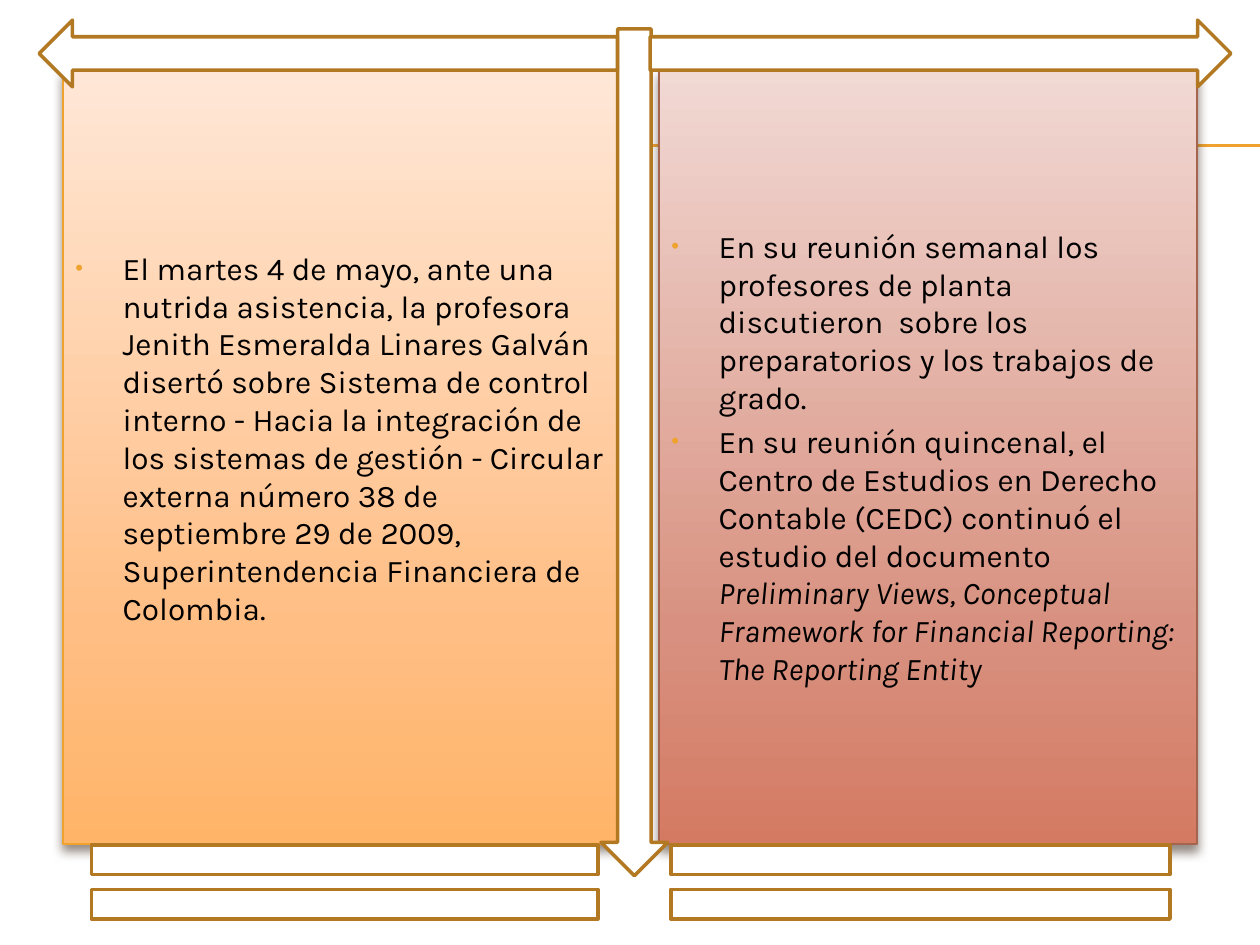
"""Two news panels framed by block arrows and equal signs."""
from copy import deepcopy

from lxml import etree
from pptx import Presentation
from pptx.dml.color import RGBColor as RGB
from pptx.enum.shapes import MSO_CONNECTOR as CONN, MSO_SHAPE as SHAPE
from pptx.enum.text import MSO_ANCHOR as ANCHOR, PP_ALIGN as ALIGN
from pptx.oxml import parse_xml
from pptx.oxml.ns import qn
from pptx.util import Pt

COLORS = {"gold": "F0A22E", "brown": "B27822", "rust": "A5644E",
          "shadow": "4E3B30", "white": "FFFFFF", "text": "000000"}
NS = 'xmlns:a="http://schemas.openxmlformats.org/drawingml/2006/main"'
INDENT = Pt(27)

PANELS = [
    (36, 318.24, "gold", ["FFE7D7", "FFBE84", "FFB468"], 25.3, [
        ["El martes 4 de mayo, ante una nutrida asistencia, la profesora Jenith "
         "Esmeralda Linares Galván disertó sobre Sistema de control interno - Hacia "
         "la integración de los sistemas de gestión - Circular externa número 38 de "
         "septiembre 29 de 2009, Superintendencia Financiera de Colombia."]]),
    (376.56, 307.44, "rust", ["F1D9D4", "D89180", "D47A62"], 3.6, [
        ["En su reunión semanal los profesores de planta discutieron  sobre los "
         "preparatorios y los trabajos de grado."],
        ["En su reunión quincenal, el Centro de Estudios en Derecho Contable (CEDC) "
         "continuó el estudio del documento ",
         "Preliminary Views, Conceptual Framework for Financial Reporting: "
         "The Reporting Entity"]]),
]

FRAME = [
    (SHAPE.DOWN_ARROW, 343.44, 16.56, 38.16, 483.84),
    (SHAPE.RIGHT_ARROW, 371.52, 11.52, 331.92, 38.16),
    (SHAPE.LEFT_ARROW, 22.32, 11.52, 330.48, 38.16),
    (SHAPE.MATH_EQUAL, 0, 468, 393.84, 72),
    (SHAPE.MATH_EQUAL, 331.92, 468, 388.08, 72),
]


def add_shape(kind, x, y, w, h, line, width):
    sp = s.shapes.add_shape(kind, Pt(x), Pt(y), Pt(w), Pt(h))
    sp.shadow.inherit = False
    sp.line.color.rgb = RGB.from_string(COLORS[line])
    sp.line.width = Pt(width)
    return sp


def add_bullet(p):
    pPr = p._p.get_or_add_pPr()
    pPr.set("marL", str(INDENT))
    pPr.set("indent", str(-INDENT))
    for xml in (f'<a:buClr {NS}><a:srgbClr val="{COLORS["gold"]}"/></a:buClr>',
                f'<a:buSzPct {NS} val="70000"/>',
                f'<a:buFont {NS} typeface="Arial"/>',
                f'<a:buChar {NS} char="•"/>'):
        pPr.append(parse_xml(xml))


prs = Presentation()
prs.slide_width, prs.slide_height = Pt(720), Pt(540)
s = prs.slides.add_slide(prs.slide_layouts[6])

for y in (82.8, 83.52):
    rule = s.shapes.add_connector(CONN.STRAIGHT, Pt(40.32), Pt(y), Pt(720), Pt(y))
    rule.line.color.rgb = RGB.from_string(COLORS["gold"])
    rule.line.width = Pt(0.75)
    etree.SubElement(rule._element.spPr, qn("a:effectLst"))

for x, w, line, gradient, bottom, paragraphs in PANELS:
    sp = add_shape(SHAPE.RECTANGLE, x, 39.6, w, 442.8, line, 0.79)
    sp.fill.gradient()
    sp.fill.gradient_angle = 270
    spPr = sp._element.spPr
    stops = spPr.find(f".//{qn('a:gsLst')}")
    stops.append(deepcopy(stops[-1]))
    for stop, position, color in zip(sp.fill.gradient_stops, (0, 0.72, 1), gradient):
        stop.position = position
        stop.color.rgb = RGB.from_string(color)
    spPr.find(qn("a:effectLst")).append(parse_xml(
        f'<a:outerShdw {NS} blurRad="{Pt(6)}" dist="{Pt(4)}" dir="5400000" '
        f'rotWithShape="0"><a:srgbClr val="{COLORS["shadow"]}">'
        '<a:alpha val="60000"/></a:srgbClr></a:outerShdw>'))

    tf = sp.text_frame
    tf.word_wrap = True
    tf.vertical_anchor = ANCHOR.MIDDLE
    tf.margin_bottom = Pt(bottom)
    for i, texts in enumerate(paragraphs):
        p = tf.add_paragraph() if i else tf.paragraphs[0]
        p.alignment = ALIGN.LEFT
        p.space_before = Pt(3.6 if i else 0)
        add_bullet(p)
        for j, text in enumerate(texts):
            r = p.add_run()
            r.text = text
            r.font.name, r.font.size = "Karla", Pt(18)
            r.font.italic = j > 0
            r.font.color.rgb = RGB.from_string(COLORS["text"])

for kind, x, y, w, h in FRAME:
    sp = add_shape(kind, x, y, w, h, "brown", 2)
    sp.fill.solid()
    sp.fill.fore_color.rgb = RGB.from_string(COLORS["white"])

prs.save("out.pptx")
